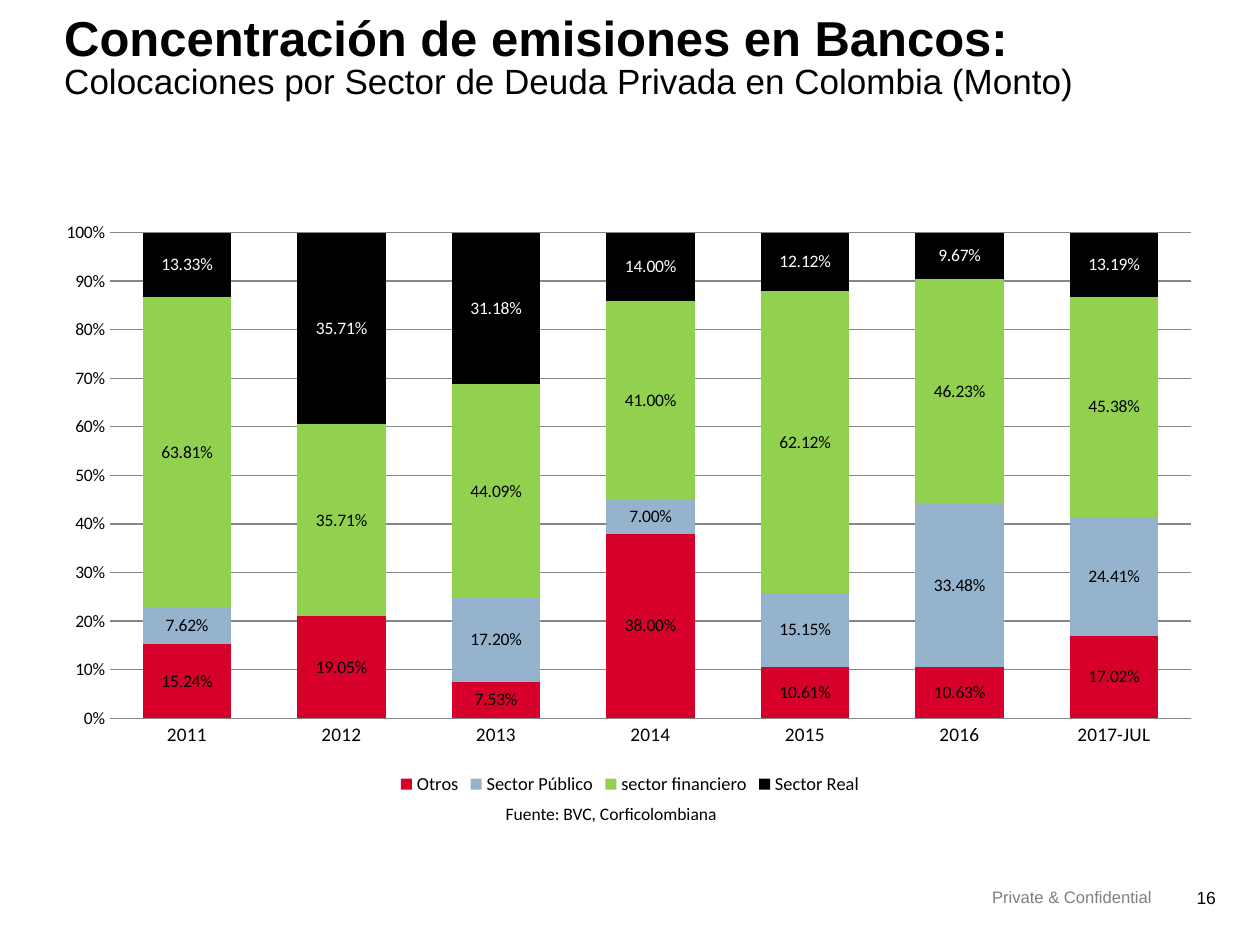
from lxml import etree
from pptx import Presentation
from pptx.chart.data import CategoryChartData
from pptx.dml.color import RGBColor
from pptx.enum.chart import XL_CHART_TYPE, XL_LEGEND_POSITION, XL_TICK_MARK
from pptx.enum.text import MSO_ANCHOR, MSO_AUTO_SIZE, PP_ALIGN
from pptx.oxml.ns import qn
from pptx.util import Inches, Pt

STACKED_100 = XL_CHART_TYPE.COLUMN_STACKED_100
LEGEND_BOTTOM = XL_LEGEND_POSITION.BOTTOM
NO_TICK = XL_TICK_MARK.NONE
LEFT, CENTER, RIGHT = PP_ALIGN.LEFT, PP_ALIGN.CENTER, PP_ALIGN.RIGHT

WIDTH, HEIGHT = Inches(10), Inches(7.5)
COLORS = {
    "text": "000000", "footer": "808080", "grid": "868686", "inverse": "FFFFFF",
    "otros": "D6002A", "publico": "95B3CC", "financiero": "92D050", "real": "000000",
}
YEARS = ["2011", "2012", "2013", "2014", "2015", "2016", "2017-JUL"]
# Sector name, fill, label colour, shares by year
SECTORS = [
    ("Otros", "otros", "text",
     [0.1524, 0.1905, 0.0753, 0.38, 0.1061, 0.1063, 0.1702]),
    ("Sector Público", "publico", "text",
     [0.0762, None, 0.172, 0.07, 0.1515, 0.3348, 0.2441]),
    ("sector financiero", "financiero", "text",
     [0.6381, 0.3571, 0.4409, 0.41, 0.6212, 0.4623, 0.4538]),
    ("Sector Real", "real", "inverse",
     [0.1333, 0.3571, 0.3118, 0.14, 0.1212, 0.0967, 0.1319]),
]
# Plot area inside the chart, as shares of the chart's size
PLOT = {"x": 0.056, "y": 0.037, "w": 0.923, "h": 0.824}


def rgb(name):
    return RGBColor.from_string(COLORS[name])


def box(left, top, width, height):
    """Turn shares of the slide into lengths."""
    return (int(left * WIDTH), int(top * HEIGHT),
            int(width * WIDTH), int(height * HEIGHT))


def style_font(font, size, color="text", face="Arial", bold=False):
    font.name, font.size, font.bold = face, Pt(size), bold
    font.color.rgb = rgb(color)


def add_run(paragraph, text, size, **style):
    run = paragraph.add_run()
    run.text = text
    style_font(run.font, size, **style)


def clear_margins(frame):
    frame.margin_left = frame.margin_right = 0
    frame.margin_top = frame.margin_bottom = 0


def place_title(slide, area):
    title = slide.shapes.title
    title.left, title.top, title.width, title.height = area
    frame = title.text_frame
    clear_margins(frame)
    frame.word_wrap = True
    frame.auto_size = MSO_AUTO_SIZE.NONE
    frame.vertical_anchor = MSO_ANCHOR.TOP
    heading = frame.paragraphs[0]
    heading.alignment = LEFT
    heading.line_spacing = 0.85
    add_run(heading, "Concentración de emisiones en Bancos:", 28, bold=True)
    heading.add_line_break()
    add_run(heading, "Colocaciones por Sector de Deuda Privada en Colombia (Monto)", 20)


def add_line(slide, area, text, size, align, **style):
    frame = slide.shapes.add_textbox(*area).text_frame
    clear_margins(frame)
    frame.word_wrap = True
    frame.paragraphs[0].alignment = align
    add_run(frame.paragraphs[0], text, size, **style)


def fix_plot_area(chart):
    plot_area = chart.plots[0]._element.getparent()
    for old in plot_area.findall(qn("c:layout")):
        plot_area.remove(old)
    layout = etree.Element(qn("c:layout"))
    manual = etree.SubElement(layout, qn("c:manualLayout"))
    settings = {"layoutTarget": "inner", "xMode": "edge", "yMode": "edge", **PLOT}
    for tag, value in settings.items():
        etree.SubElement(manual, qn("c:" + tag)).set("val", str(value))
    plot_area.insert(0, layout)


def place_chart(slide, area):
    data = CategoryChartData(number_format="0.00%")
    data.categories = YEARS
    for sector, _, _, shares in SECTORS:
        data.add_series(sector, shares)
    chart = slide.shapes.add_chart(STACKED_100, *area, data).chart
    chart.has_title = False
    style_font(chart.font, 10, face="Calibri")
    fix_plot_area(chart)

    # Columns and their labels
    plot = chart.plots[0]
    plot.gap_width, plot.overlap = 75, 100
    plot.vary_by_categories = False
    for series, (_, fill, label_color, _) in zip(plot.series, SECTORS):
        series.format.fill.solid()
        series.format.fill.fore_color.rgb = rgb(fill)
        labels = series.data_labels
        labels.show_value = True
        labels.number_format, labels.number_format_is_linked = "0.00%", False
        style_font(labels.font, 10, label_color, "Calibri")

    # Axes
    years, percent = chart.category_axis, chart.value_axis
    for axis, size in ((years, 11), (percent, 10)):
        axis.major_tick_mark = axis.minor_tick_mark = NO_TICK
        style_font(axis.tick_labels.font, size, face="Calibri")
    percent.minimum_scale, percent.maximum_scale, percent.major_unit = 0, 1, 0.1
    percent.tick_labels.number_format = "0%"
    percent.tick_labels.number_format_is_linked = False
    percent.format.line.fill.background()
    percent.has_major_gridlines = True
    for line in (years.format.line, percent.major_gridlines.format.line):
        line.color.rgb = rgb("grid")
        line.width = Pt(0.75)

    # Legend
    chart.has_legend = True
    chart.legend.position = LEGEND_BOTTOM
    chart.legend.include_in_layout = False
    style_font(chart.legend.font, 10.5, face="Calibri")


def place_footer(slide, top, height):
    add_line(slide, box(0.594, top, 0.32, height), "Private & Confidential",
             9.5, RIGHT, color="footer")
    add_line(slide, box(0.942, top, 0.023, height), "16", 10, RIGHT)


def main():
    deck = Presentation()
    deck.slide_width, deck.slide_height = WIDTH, HEIGHT
    slide = deck.slides.add_slide(deck.slide_layouts[5])
    place_title(slide, box(0.051, 0.017, 0.9, 0.147))
    place_chart(slide, box(0.035, 0.223, 0.93, 0.624))
    add_line(slide, box(0.39, 0.85, 0.19, 0.03), "Fuente: BVC, Corficolombiana",
             10, CENTER, face="Calibri")
    place_footer(slide, 0.939, 0.035)
    deck.save("out.pptx")


if __name__ == "__main__":
    main()
